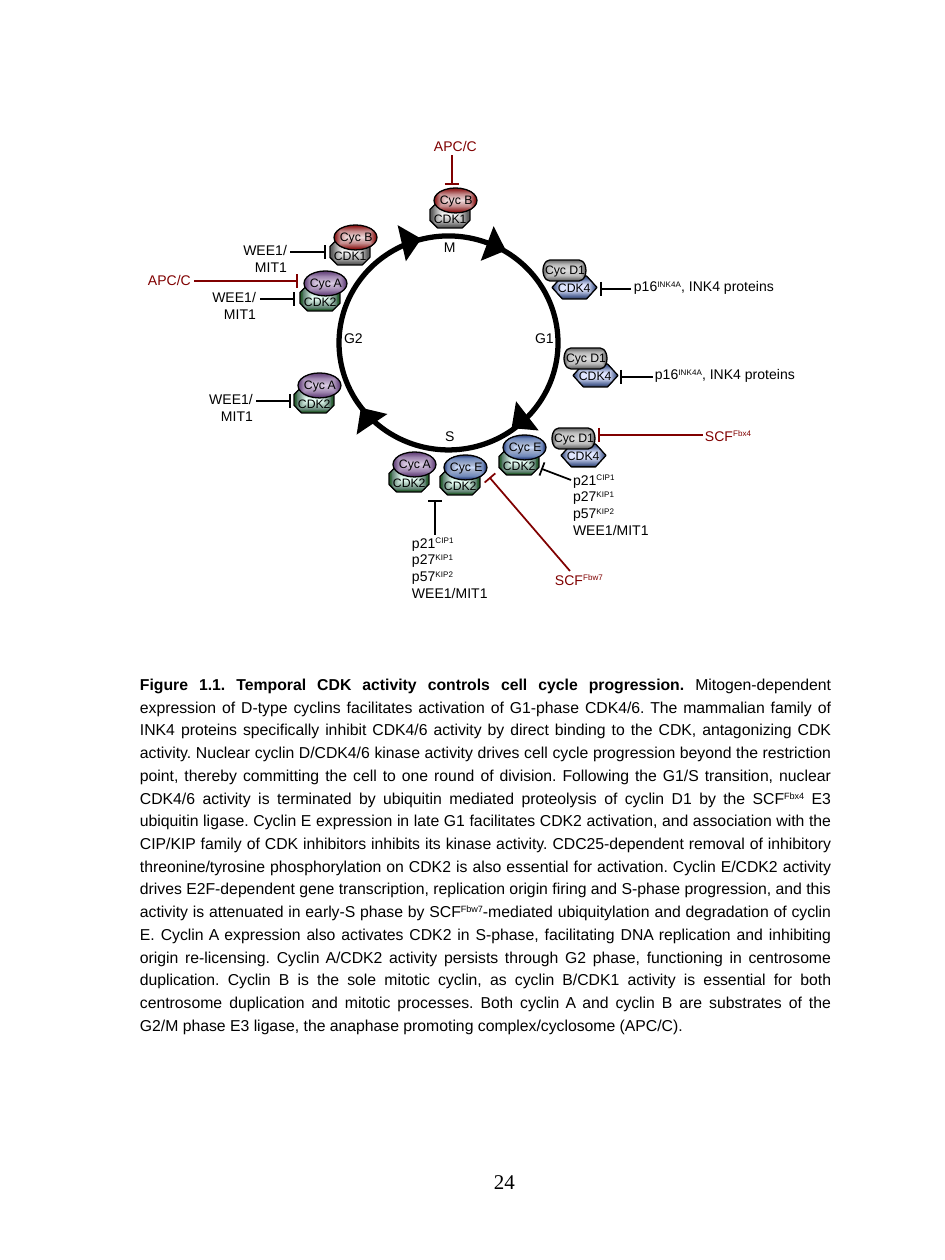
import math
from lxml import etree
from pptx import Presentation
from pptx import util as u
from pptx.dml.color import RGBColor
from pptx.enum import shapes, text
from pptx.oxml.ns import qn

PX = 914400 / 126  # EMU in one px
KIND = shapes.MSO_SHAPE
ALIGN = text.PP_ALIGN
COLORS = {"black": "000000", "red": "800000"}
# Gradient stops, from the centre outwards: percent and colour
GRADIENTS = {
    "CDK1": [(8, "F2F2F2"), (42, "BFBFBF"), (90, "606060"), (99, "606060")],
    "CDK2": [(8, "E7FFF5"), (78, "5E8070"), (90, "2B6133")],
    "CDK4": [(20, "DFE5FF"), (83, "4C6091"), (100, "32384C")],
    "Cyc A": [(0, "D7C9E0"), (53, "A289B2"), (100, "56336D")],
    "Cyc B": [(0, "EED9DA"), (47, "C58D8E"), (100, "800000")],
    "Cyc D1": [(0, "D9D9D9"), (50, "BFBFBF"), (100, "606060")],
    "Cyc E": [(0, "CCDEFF"), (21, "A7B4CF"), (70, "718ABB"), (90, "364B84"), (99, "212B4C")],
}

deck = Presentation()
deck.slide_width, deck.slide_height = u.Emu(round(945 * PX)), u.Emu(round(1260 * PX))
page = deck.slides.add_slide(deck.slide_layouts[6])


def put_text(at, lines, size=8, color="black", align=ALIGN.LEFT, inset=(13, 6), font="Arial"):
    """Add a text box; the text between two ^ marks is superscript."""
    box = page.shapes.add_textbox(*[u.Emu(round(n * PX)) for n in at])
    frame = box.text_frame
    frame.word_wrap = True
    frame.auto_size = text.MSO_AUTO_SIZE.SHAPE_TO_FIT_TEXT
    frame.margin_left = frame.margin_right = u.Emu(round(inset[0] * PX))
    frame.margin_top = frame.margin_bottom = u.Emu(round(inset[1] * PX))
    for row, line in enumerate(lines):
        para = frame.add_paragraph() if row else frame.paragraphs[0]
        para.alignment = align
        para.font.size, para.font.name = u.Pt(size), font
        para.font.color.rgb = RGBColor.from_string(COLORS[color])
        for index, part in enumerate(line.split("^")):
            if part:
                span = para.add_run()
                span.text = part
                if index % 2:
                    span._r.get_or_add_rPr().set("baseline", "30000")
    return frame


def put_shape(kind, at, line_width=0.75, stops=()):
    """Add a black-lined shape, filled from its centre when stops are given."""
    shape = page.shapes.add_shape(kind, *[u.Emu(round(n * PX)) for n in at])
    shape.shadow.inherit = False
    shape.line.color.rgb = RGBColor.from_string(COLORS["black"])
    shape.line.width = u.Pt(line_width)
    shape.fill.background()
    if stops:
        shape.fill.gradient()
        gradient = shape._element.spPr.find(qn("a:gradFill"))
        gradient.clear()
        stop_list = etree.SubElement(gradient, qn("a:gsLst"))
        for percent, color in stops:
            stop = etree.SubElement(stop_list, qn("a:gs"), pos=str(percent * 1000))
            etree.SubElement(stop, qn("a:srgbClr"), val=color)
        shade = etree.SubElement(gradient, qn("a:path"), path="shape")
        etree.SubElement(shade, qn("a:fillToRect"), l="50000", t="50000", r="50000", b="50000")
    return shape


# Cell cycle ring with its direction arrows
put_shape(KIND.OVAL, (339, 236, 219, 214), line_width=3)
for x, y, angle in [(478, 237, 110.4), (393, 231, 77.1), (501, 412, 232.2), (348, 406, 326.2)]:
    arrow = put_shape(KIND.ISOSCELES_TRIANGLE, (x, y, 37, 20))
    arrow.rotation = angle
    arrow.fill.solid()
    arrow.fill.fore_color.rgb = RGBColor.from_string(COLORS["black"])
    arrow.line.fill.background()

# Phase names
for phase, x, y in [("M", 431, 233), ("S", 432, 421), ("G1", 522, 324), ("G2", 331, 324)]:
    put_text((x, y, 82, 30), [phase])

# Cyclin and CDK2 or CDK1 pairs
for cyclin, kinase, x, y in [
    ("Cyc E", "CDK2", 499, 449),
    ("Cyc E", "CDK2", 440, 469),
    ("Cyc A", "CDK2", 389, 466),
    ("Cyc A", "CDK2", 294, 387),
    ("Cyc A", "CDK2", 300, 285),
    ("Cyc B", "CDK1", 330, 239),
    ("Cyc B", "CDK1", 430, 202),
]:
    put_shape(KIND.OCTAGON, (x, y, 40, 26), stops=GRADIENTS[kinase])
    put_text((x - 7, y + 4, 60, 25), [kinase], size=7, inset=(11, 5))
    put_shape(KIND.OVAL, (x + 4, y - 14, 43, 25), stops=GRADIENTS[cyclin])
    put_text((x - 1, y - 15, 63, 25), [cyclin], size=7, inset=(11, 5))

# Cyclin D1 and CDK4 pairs
for x, y in [(552, 276), (573, 364), (561, 444)]:
    hexagon = put_shape(KIND.HEXAGON, (x, y, 45, 23), stops=GRADIENTS["CDK4"])
    hexagon.adjustments[0] = 0.455
    put_text((x - 7, y - 2, 73, 28), ["CDK4"], size=7)
    put_shape(KIND.FLOWCHART_TERMINATOR, (x - 9, y - 16, 43, 21), stops=GRADIENTS["Cyc D1"])
    put_text((x - 24, y - 20, 74, 28), ["Cyc D1"], size=7, align=ALIGN.CENTER)

# Inhibition marks: a stem and a bar square to its tip
for tip_x, tip_y, end_x, end_y, color in [
    (452, 184, 452, 155, "red"),
    (297, 281, 194, 281, "red"),
    (599, 435, 703, 435, "red"),
    (490, 478, 570, 571, "red"),
    (325, 252, 290, 252, "black"),
    (294, 299, 260, 299, "black"),
    (290, 401, 256, 401, "black"),
    (601, 289, 631, 289, "black"),
    (621, 377, 653, 377, "black"),
    (542, 469, 571, 480, "black"),
    (435, 501, 435, 535, "black"),
]:
    length = math.hypot(end_x - tip_x, end_y - tip_y)
    across_x = 7 * (tip_y - end_y) / length
    across_y = 7 * (end_x - tip_x) / length
    stem = (tip_x, tip_y, end_x, end_y)
    bar = (tip_x - across_x, tip_y - across_y, tip_x + across_x, tip_y + across_y)
    for ends in (stem, bar):
        line = page.shapes.add_connector(
            shapes.MSO_CONNECTOR.STRAIGHT, *[u.Emu(round(n * PX)) for n in ends])
        line.line.color.rgb = RGBColor.from_string(COLORS[color])
        line.line.width = u.Pt(1)
        etree.SubElement(line._element.spPr, qn("a:effectLst"))

# Inhibitor names
for x, y in [(199, 236), (168, 283), (165, 385)]:
    put_text((x, y, 101, 30), ["WEE1/MIT1"], align=ALIGN.RIGHT)
for x, y in [(621, 272), (642, 360)]:
    put_text((x, y, 175, 30), ["p16^INK4A^, INK4 proteins"])
for x, y in [(560, 465), (399, 528)]:
    put_text((x, y, 110, 92), ["p21^CIP1", "p27^KIP1", "p57^KIP2", "WEE1/MIT1"])
for name, x, y in [("APC/C", 421, 131), ("APC/C", 135, 266),
                   ("SCF^Fbx4", 692, 421), ("SCF^Fbw7", 542, 565)]:
    put_text((x, y, 91, 30), [name], color="red")

# Caption, with a bold title
sentences = [
    "Figure 1.1. Temporal CDK activity controls cell cycle progression.^^",
    "Mitogen-dependent expression of D-type cyclins facilitates activation of G1-phase CDK4/6.",
    "The mammalian family of INK4 proteins specifically inhibit CDK4/6 activity by direct "
    "binding to the CDK, antagonizing CDK activity.",
    "Nuclear cyclin D/CDK4/6 kinase activity drives cell cycle progression beyond the "
    "restriction point, thereby committing the cell to one round of division.",
    "Following the G1/S transition, nuclear CDK4/6 activity is terminated by ubiquitin "
    "mediated proteolysis of cyclin D1 by the SCF^Fbx4^ E3 ubiquitin ligase.",
    "Cyclin E expression in late G1 facilitates CDK2 activation, and association with the "
    "CIP/KIP family of CDK inhibitors inhibits its kinase activity.",
    "CDC25-dependent removal of inhibitory threonine/tyrosine phosphorylation on CDK2 is also "
    "essential for activation.",
    "Cyclin E/CDK2 activity drives E2F-dependent gene transcription, replication origin firing "
    "and S-phase progression, and this activity is attenuated in early-S phase by "
    "SCF^Fbw7^-mediated ubiquitylation and degradation of cyclin E.",
    "Cyclin A expression also activates CDK2 in S-phase, facilitating DNA replication and "
    "inhibiting origin re-licensing.",
    "Cyclin A/CDK2 activity persists through G2 phase, functioning in centrosome duplication.",
    "Cyclin B is the sole mitotic cyclin, as cyclin B/CDK1 activity is essential for both "
    "centrosome duplication and mitotic processes.",
    "Both cyclin A and cyclin B are substrates of the G2/M phase E3 ligase, the anaphase "
    "promoting complex/cyclosome (APC/C).",
]
caption = put_text((127, 658, 717, 392), [" ".join(sentences)],
                   size=9, align=ALIGN.JUSTIFY, inset=(13, 13))
caption.paragraphs[0].line_spacing = 1.2
caption.paragraphs[0].runs[0].font.bold = True

# Page number
number = put_text((481, 1163, 47, 38), ["24"], size=12, font="Times New Roman")
number.word_wrap = False

deck.save("out.pptx")
